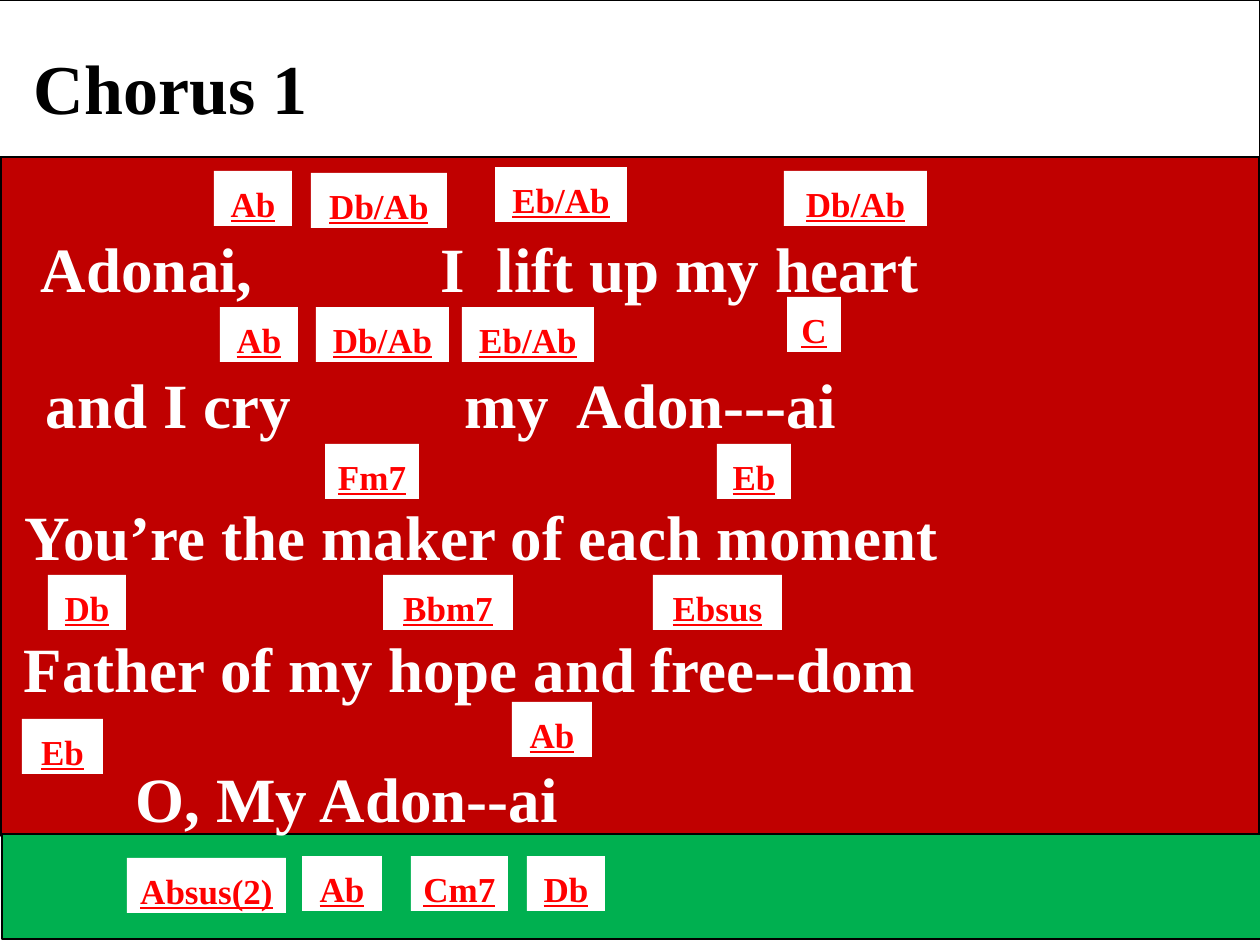
from dataclasses import dataclass

from lxml import etree
from pptx import Presentation
from pptx import util as u
from pptx.dml.color import RGBColor
from pptx.enum import shapes, text
from pptx.oxml.ns import qn

PX_PER_INCH = 126


def px(length):
    return u.Emu(round(length * u.Inches(1) / PX_PER_INCH))


@dataclass(frozen=True)
class Theme:
    font: str = "Times New Roman"
    white: str = "FFFFFF"
    black: str = "000000"
    verse: str = "C00000"
    footer: str = "00B050"
    chord: str = "FF0000"
    title_size: int = 40
    lyric_size: int = 36
    chord_size: int = 20
    outline: float = 0.75


def write(box, content, *, size, color, left=0, top=0, underline=None,
          align=text.PP_ALIGN.LEFT, tabs=()):
    """Set one bold paragraph; left and top are insets, tabs are px from the text start."""
    frame = box.text_frame
    frame.auto_size = text.MSO_AUTO_SIZE.NONE
    frame.word_wrap = True
    frame.vertical_anchor = text.MSO_ANCHOR.TOP
    frame.margin_left, frame.margin_top = px(left), px(top)
    frame.margin_right = frame.margin_bottom = 0
    para = frame.paragraphs[0]
    para.alignment = align
    para.space_before = u.Pt(0)
    span = para.add_run()
    span.text = content
    font = span.font
    font.name, font.size = Theme.font, u.Pt(size)
    font.bold, font.underline = True, underline
    font.color.rgb = RGBColor.from_string(color)
    if tabs:
        stops = etree.SubElement(para._p.get_or_add_pPr(), qn("a:tabLst"))
        for tab in tabs:
            etree.SubElement(stops, qn("a:tab"), pos=str(px(tab)), algn="l")


class SongPage:
    def __init__(self, page, theme):
        self.page = page
        self.theme = theme

    def fill(self, shape, color):
        shape.fill.solid()
        shape.fill.fore_color.rgb = RGBColor.from_string(color)

    def rect(self, left, top, width, height, color):
        box = self.page.shapes.add_shape(
            shapes.MSO_SHAPE.RECTANGLE, px(left), px(top), px(width), px(height))
        box.shadow.inherit = False
        self.fill(box, color)
        box.line.fill.background()
        return box

    def band(self, left, top, width, height, color):
        box = self.rect(left, top, width, height, color)
        box.line.color.rgb = RGBColor.from_string(self.theme.black)
        box.line.width = u.Pt(self.theme.outline)
        return box

    def title(self, content, left, top, width, height, above):
        """Format the title placeholder and stack it just above the given shape."""
        box = self.page.shapes.title
        box.left, box.top, box.width, box.height = map(px, (left, top, width, height))
        self.fill(box, self.theme.white)
        write(box, content, size=self.theme.title_size, color=self.theme.black,
              left=13, top=14)
        above.element.addnext(box.element)

    def lyric(self, content, indent, top, tabs=()):
        box = self.page.shapes.add_textbox(0, px(top), px(1260), px(89))
        write(box, content, size=self.theme.lyric_size, color=self.theme.white,
              left=indent, top=13, tabs=tabs)

    def chord(self, name, left, top, width):
        box = self.rect(left, top, width, 55, self.theme.white)
        write(box, name, size=self.theme.chord_size, color=self.theme.chord,
              top=11, underline=True, align=text.PP_ALIGN.CENTER)


LYRICS = [
    ("Adonai,\tI\tlift up my heart", 41, 217, (400, 456)),
    ("and I cry\tmy\tAdon---ai", 46, 353, (419, 531)),
    ("You’re the maker of each moment", 25, 485),
    ("Father of my hope and free--dom", 24, 617),
    ("O, My Adon--ai", 136, 747),
]

CHORDS = [
    ("Ab", 214, 171, 78), ("Db/Ab", 311, 173, 136),
    ("Eb/Ab", 495, 167, 132), ("Db/Ab", 784, 171, 143),
    ("Ab", 220, 307, 78), ("Db/Ab", 316, 307, 133),
    ("Eb/Ab", 462, 307, 132), ("C", 787, 297, 54),
    ("Fm7", 325, 444, 94), ("Eb", 717, 444, 74),
    ("Db", 48, 575, 78), ("Bbm7", 383, 575, 130), ("Ebsus", 653, 575, 129),
    ("Eb", 22, 719, 81), ("Ab", 512, 702, 80),
    ("Absus(2)", 127, 858, 159), ("Ab", 302, 856, 80),
    ("Cm7", 411, 856, 97), ("Db", 527, 856, 78),
]


def main():
    deck = Presentation()
    deck.slide_width, deck.slide_height = px(1260), px(945)
    theme = Theme()
    song = SongPage(deck.slides.add_slide(deck.slide_layouts[5]), theme)

    song.band(1, 157, 1258, 679, theme.verse)
    header = song.band(-1, 0, 1261, 157, theme.white)
    song.title("Chorus 1", 21, 31, 420, 97, above=header)
    song.band(2, 834, 1259, 105, theme.footer)
    for line in LYRICS:
        song.lyric(*line)
    for chord in CHORDS:
        song.chord(*chord)

    deck.save("out.pptx")


if __name__ == "__main__":
    main()
